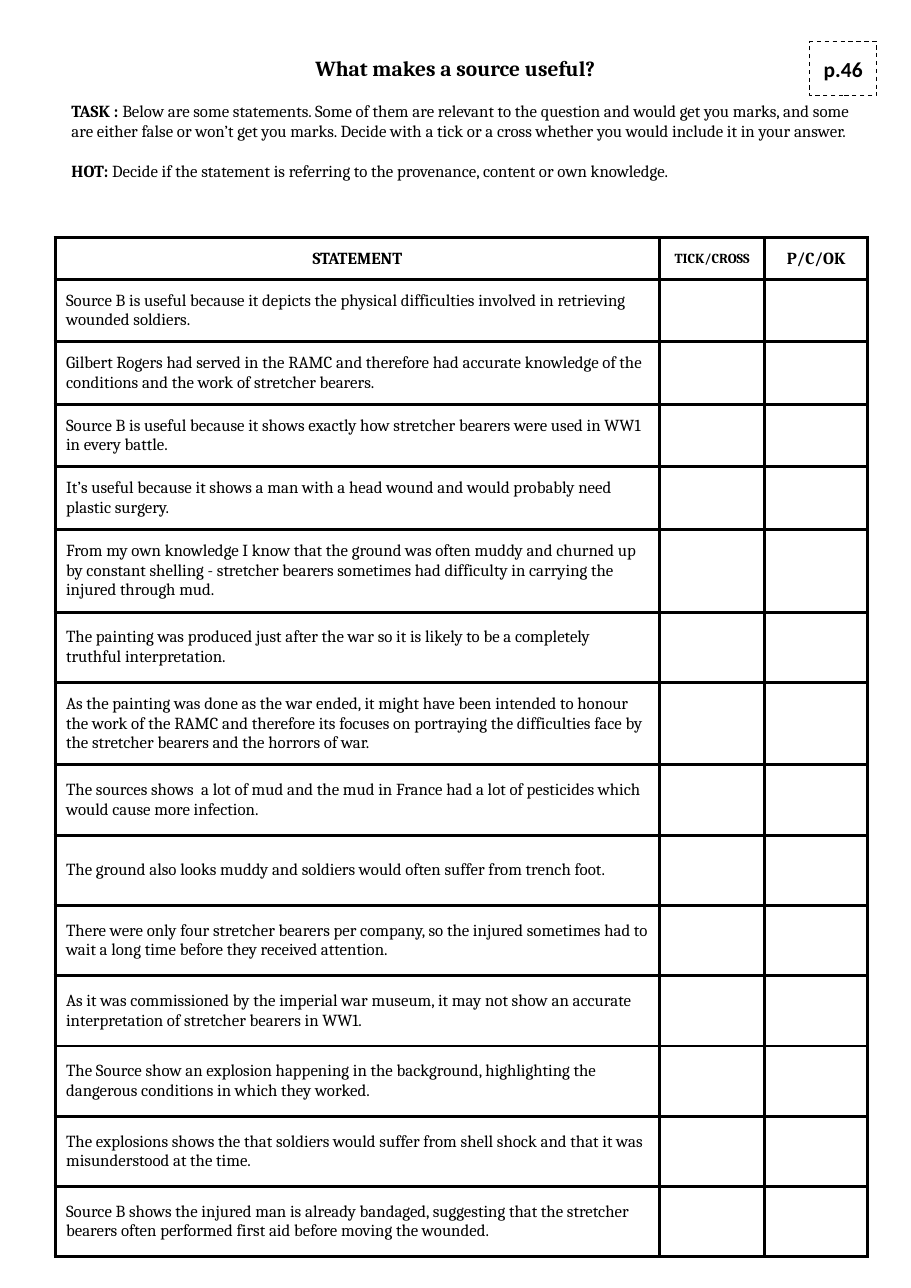
from lxml import etree
from pptx import Presentation
from pptx.dml.color import RGBColor
from pptx.enum.dml import MSO_LINE
from pptx.enum.shapes import MSO_SHAPE
from pptx.enum.text import MSO_ANCHOR, MSO_AUTO_SIZE, PP_ALIGN
from pptx.oxml.ns import qn
from pptx.util import Inches, Pt

CENTER, LEFT = PP_ALIGN.CENTER, PP_ALIGN.LEFT
MIDDLE, TOP = MSO_ANCHOR.MIDDLE, MSO_ANCHOR.TOP
RECTANGLE, DASH, NO_AUTOFIT = MSO_SHAPE.RECTANGLE, MSO_LINE.DASH, MSO_AUTO_SIZE.NONE
TITLE_ONLY = 5

COLORS = {"ink": "000000", "paper": "FFFFFF"}
GRID = Inches(0.1)
GRID_COLUMNS, GRID_ROWS = 82.7, 116.9
BORDER = Pt(2.25)

TITLE_BOX = (8.3, 3.8, 66.1, 4.8)
PAGE_BOX = (73.5, 3.8, 6.1, 4.9)
TASK_BOX = (5.5, 8.1, 72.8, 11.2)
TABLE_BOX = (5, 21.6, 73.8, 92.6)
COLUMN_WIDTHS = (54.9, 9.5, 9.4)
HEADER_HEIGHT, COMPACT, ROOMY, TALL = 3.7, 5.67, 6.38, 7.5

TASKS = [
    ("TASK : ", "Below are some statements. Some of them are relevant to the question and would "
     "get you marks, and some are either false or won’t get you marks. Decide with a tick or a "
     "cross whether you would include it in your answer."),
    ("HOT: ", "Decide if the statement is referring to the provenance, content or own knowledge."),
]
HEADERS = [("STATEMENT", 11, MIDDLE), ("TICK/CROSS", 9, MIDDLE), ("P/C/OK", 11, TOP)]
STATEMENTS = [
    (COMPACT, "Source B is useful because it depicts the physical difficulties involved in "
     "retrieving wounded soldiers."),
    (COMPACT, "Gilbert Rogers had served in the RAMC and therefore had accurate knowledge of the "
     "conditions and the work of stretcher bearers."),
    (COMPACT, "Source B is useful because it shows exactly how stretcher bearers were used in WW1 "
     "in every battle."),
    (COMPACT, "It’s useful because it shows a man with a head wound and would probably need "
     "plastic surgery."),
    (TALL, "From my own knowledge I know that the ground was often muddy and churned up by "
     "constant shelling - stretcher bearers sometimes had difficulty in carrying the injured "
     "through mud."),
    (ROOMY, "The painting was produced just after the war so it is likely to be a completely "
     "truthful interpretation."),
    (TALL, "As the painting was done as the war ended, it might have been intended to honour the "
     "work of the RAMC and therefore its focuses on portraying the difficulties face by the "
     "stretcher bearers and the horrors of war."),
    (ROOMY, "The sources shows  a lot of mud and the mud in France had a lot of pesticides which "
     "would cause more infection."),
    (ROOMY, "The ground also looks muddy and soldiers would often suffer from trench foot."),
    (ROOMY, "There were only four stretcher bearers per company, so the injured sometimes had to "
     "wait a long time before they received attention."),
    (ROOMY, "As it was commissioned by the imperial war museum, it may not show an accurate "
     "interpretation of stretcher bearers in WW1."),
    (ROOMY, "The Source show an explosion happening in the background, highlighting the dangerous "
     "conditions in which they worked."),
    (ROOMY, "The explosions shows the that soldiers would suffer from shell shock and that it was "
     "misunderstood at the time."),
    (ROOMY, "Source B shows the injured man is already bandaged, suggesting that the stretcher "
     "bearers often performed first aid before moving the wounded."),
]


def units(count):
    """Turn a number of grid units into a length."""
    return round(count * GRID)


def place(box):
    """Turn a grid box into left, top, width and height."""
    return [units(count) for count in box]


def color(name):
    """Look up a named colour."""
    return RGBColor.from_string(COLORS[name])


def write(paragraph, text, size=11, font="Cambria", bold=False, align=LEFT):
    """Add a formatted run to a paragraph."""
    paragraph.alignment = align
    run = paragraph.add_run()
    run.text = text
    run.font.size, run.font.name, run.font.bold = Pt(size), font, bold
    run.font.color.rgb = color("ink")


def prepare_frame(frame, anchor):
    """Set wrapping, anchor and equal insets of a text frame."""
    frame.word_wrap = True
    frame.auto_size = NO_AUTOFIT
    frame.vertical_anchor = anchor
    frame.margin_left = frame.margin_right = frame.margin_top = frame.margin_bottom = GRID


def add_title(slide, box):
    """Place the centred title."""
    title = slide.shapes.title
    title.left, title.top, title.width, title.height = place(box)
    prepare_frame(title.text_frame, MIDDLE)
    write(title.text_frame.paragraphs[0], "What makes a source useful?",
          size=14, bold=True, align=CENTER)


def add_page_label(slide, box):
    """Draw the dashed page number box."""
    label = slide.shapes.add_shape(RECTANGLE, *place(box))
    label.shadow.inherit = False
    label.fill.solid()
    label.fill.fore_color.rgb = color("paper")
    label.line.color.rgb = color("ink")
    label.line.width = Pt(0.75)
    label.line.dash_style = DASH
    prepare_frame(label.text_frame, MIDDLE)
    write(label.text_frame.paragraphs[0], "p.46", size=14, font="Calibri",
          bold=True, align=CENTER)


def add_tasks(slide, box):
    """Write the task and its extension, one paragraph each."""
    frame = slide.shapes.add_textbox(*place(box)).text_frame
    prepare_frame(frame, TOP)
    for index, (lead, instruction) in enumerate(TASKS):
        paragraph = frame.add_paragraph() if index else frame.paragraphs[0]
        paragraph.space_before = Pt(13 * index)
        write(paragraph, lead, bold=True)
        write(paragraph, instruction)


def format_cell(cell, anchor=MIDDLE):
    """Give a cell its insets, borders and fill."""
    cell.vertical_anchor = anchor
    cell.margin_left = cell.margin_right = cell.margin_top = cell.margin_bottom = GRID
    properties = cell._tc.get_or_add_tcPr()
    for side in ("a:lnL", "a:lnR", "a:lnT", "a:lnB"):
        line = etree.SubElement(properties, qn(side), w=str(BORDER))
        fill = etree.SubElement(line, qn("a:solidFill"))
        etree.SubElement(fill, qn("a:srgbClr"), val=COLORS["ink"])
    cell.fill.solid()
    cell.fill.fore_color.rgb = color("paper")


def add_statement_table(slide, box):
    """Build the table of statements with two columns to fill in."""
    shape = slide.shapes.add_table(len(STATEMENTS) + 1, len(HEADERS), *place(box))
    table = shape.table
    table.first_row = table.horz_banding = False
    for column, width in zip(table.columns, COLUMN_WIDTHS):
        column.width = units(width)
    heights = [HEADER_HEIGHT] + [height for height, _ in STATEMENTS]
    for row, height in zip(table.rows, heights):
        row.height = units(height)
    for index, (text, size, anchor) in enumerate(HEADERS):
        cell = table.cell(0, index)
        format_cell(cell, anchor)
        write(cell.text_frame.paragraphs[0], text, size=size, bold=True, align=CENTER)
    for row, (_, statement) in enumerate(STATEMENTS, start=1):
        for column in range(len(HEADERS)):
            format_cell(table.cell(row, column))
        write(table.cell(row, 0).text_frame.paragraphs[0], statement)


def main():
    """Build the worksheet and save it."""
    presentation = Presentation()
    presentation.slide_width = units(GRID_COLUMNS)
    presentation.slide_height = units(GRID_ROWS)
    slide = presentation.slides.add_slide(presentation.slide_layouts[TITLE_ONLY])
    add_tasks(slide, TASK_BOX)
    add_statement_table(slide, TABLE_BOX)
    add_page_label(slide, PAGE_BOX)
    add_title(slide, TITLE_BOX)
    presentation.save("out.pptx")


if __name__ == "__main__":
    main()
